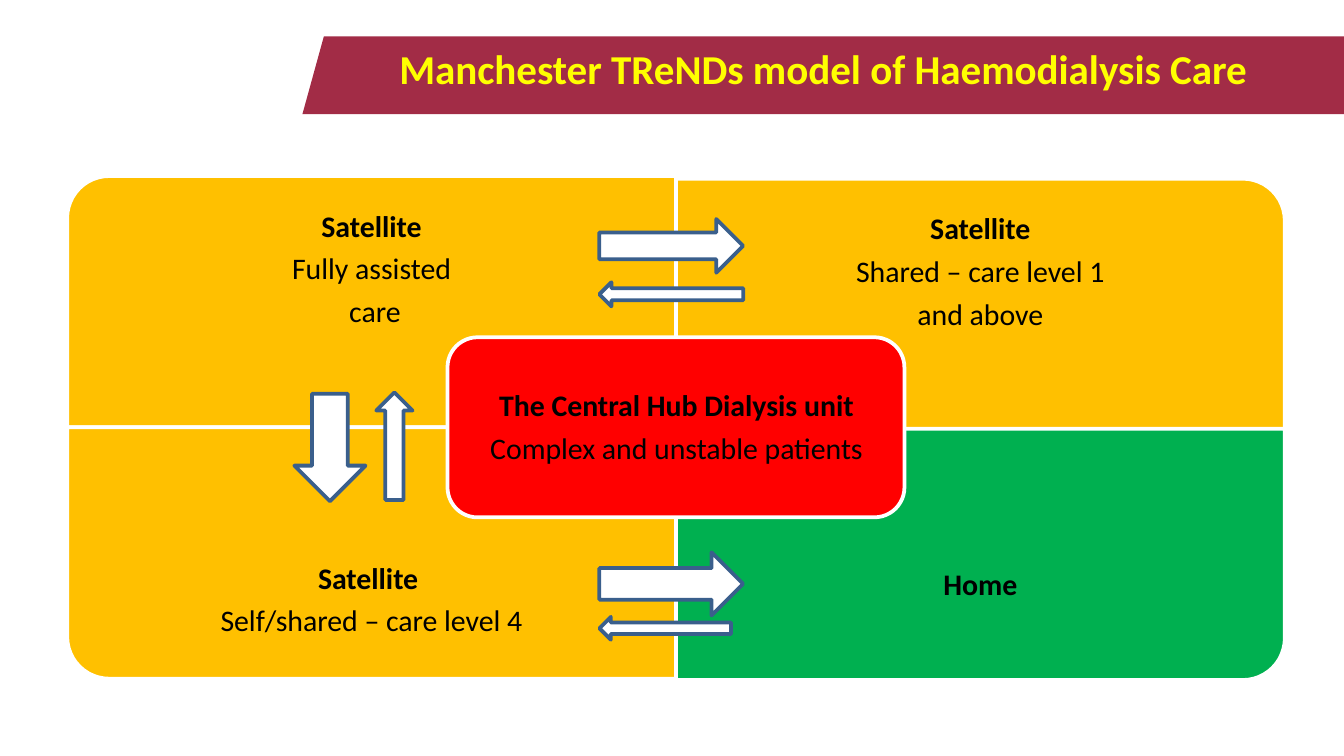
from pptx import Presentation
from pptx.dml.color import RGBColor
from pptx.enum.shapes import MSO_SHAPE
from pptx.enum.text import MSO_ANCHOR, PP_ALIGN
from pptx.util import Inches, Pt

RIGHT, LEFT = MSO_SHAPE.RIGHT_ARROW, MSO_SHAPE.LEFT_ARROW
DOWN, UP = MSO_SHAPE.DOWN_ARROW, MSO_SHAPE.UP_ARROW
TILE, HUB = MSO_SHAPE.ROUND_1_RECTANGLE, MSO_SHAPE.ROUNDED_RECTANGLE
CENTER, MIDDLE = PP_ALIGN.CENTER, MSO_ANCHOR.MIDDLE

WHITE = RGBColor(0xFF, 0xFF, 0xFF)
BLACK = RGBColor(0, 0, 0)
YELLOW = RGBColor(0xFF, 0xFF, 0)
AMBER = RGBColor(0xFF, 0xC0, 0)
GREEN = RGBColor(0, 0xB0, 0x50)
RED = RGBColor(0xFF, 0, 0)
WINE = RGBColor(0xA2, 0x2C, 0x46)
BLUE = RGBColor(0x3A, 0x5F, 0x8C)

TILE_W, TILE_H, TEXT_H = 4.53, 1.87, 1.4
TILES = [
    (0.5, 1.31, 270, AMBER, 1.31, ["Satellite", "Fully assisted", " care"]),
    (5.03, 1.33, 0, AMBER, 1.33, ["Satellite", "Shared – care level 1", " and above "]),
    (0.5, 3.18, 180, AMBER, 3.77, ["Satellite ", "Self/shared – care level 4"]),
    (5.03, 3.19, 90, GREEN, 3.66, ["Home"]),
]
ARROWS = [
    (RIGHT, 4.46, 1.63, 1.07, 0.4),
    (LEFT, 4.46, 2.1, 1.07, 0.18),
    (RIGHT, 4.46, 4.11, 1.07, 0.47),
    (LEFT, 4.46, 4.59, 0.98, 0.17),
    (DOWN, 2.19, 2.93, 0.53, 0.8),
    (UP, 2.8, 2.92, 0.27, 0.8),
]


def write(frame, lines, size=16, color=BLACK, inset=0.12, spacing=0.9, after=5.6):
    """Fill a frame with centred lines, the first one bold."""
    frame.word_wrap = True
    frame.vertical_anchor = MIDDLE
    frame.margin_left = frame.margin_right = Inches(inset)
    frame.margin_top = frame.margin_bottom = Inches(inset)
    for i, line in enumerate(lines):
        para = frame.paragraphs[0] if i == 0 else frame.add_paragraph()
        para.alignment = CENTER
        para.line_spacing = spacing
        para.space_before, para.space_after = Pt(0), Pt(after)
        run = para.add_run()
        run.text = line
        run.font.name, run.font.size = "Calibri", Pt(size)
        run.font.bold = i == 0
        run.font.color.rgb = color


def label(slide, x, y, w, h, lines, **form):
    """Add a text box."""
    box = slide.shapes.add_textbox(Inches(x), Inches(y), Inches(w), Inches(h))
    write(box.text_frame, lines, **form)


def block(slide, kind, x, y, w, h, fill, line=WHITE, turn=0):
    """Add a shape that covers the given area after its turn."""
    if turn % 180:
        x, y, w, h = x + (w - h) / 2, y + (h - w) / 2, h, w
    shape = slide.shapes.add_shape(kind, Inches(x), Inches(y), Inches(w), Inches(h))
    shape.shadow.inherit = False
    shape.rotation = turn
    shape.fill.solid()
    shape.fill.fore_color.rgb = fill
    shape.line.color.rgb = line
    shape.line.width = Pt(2)


def banner(slide, text):
    """Draw the slanted band and set the title on it."""
    pen = slide.shapes.build_freeform(Inches(10), Inches(0.27))
    points = [(2.41, 0.27), (2.25, 0.85), (10, 0.85)]
    pen.add_line_segments([(Inches(x), Inches(y)) for x, y in points], close=True)
    band = pen.convert_to_shape()
    band.shadow.inherit = False
    band.fill.solid()
    band.fill.fore_color.rgb = WINE
    band.line.fill.background()
    title = slide.shapes.title
    title.left, title.top = Inches(2.25), Inches(0.22)
    title.width, title.height = Inches(7.75), Inches(0.58)
    write(title.text_frame, [text], size=22, color=YELLOW, inset=0, spacing=1, after=0)
    band.element.addnext(title.element)


def main():
    """Build the slide and save it."""
    deck = Presentation()
    deck.slide_width = Inches(10)
    deck.slide_height = Inches(10 * 9 / 16)
    slide = deck.slides.add_slide(deck.slide_layouts[5])
    banner(slide, "Manchester TReNDs model of Haemodialysis Care")
    for x, y, turn, fill, top, lines in TILES:
        block(slide, TILE, x, y, TILE_W, TILE_H, fill, turn=turn)
        label(slide, x, top, TILE_W, TEXT_H, lines)
    block(slide, HUB, 3.33, 2.51, 3.4, 1.34, RED)
    hub = ["The Central Hub Dialysis unit", "Complex and unstable patients"]
    label(slide, 3.4, 2.58, 3.27, 1.21, hub, inset=0.07)
    for kind, x, y, w, h in ARROWS:
        block(slide, kind, x, y, w, h, WHITE, line=BLUE)
    deck.save("out.pptx")


if __name__ == "__main__":
    main()
